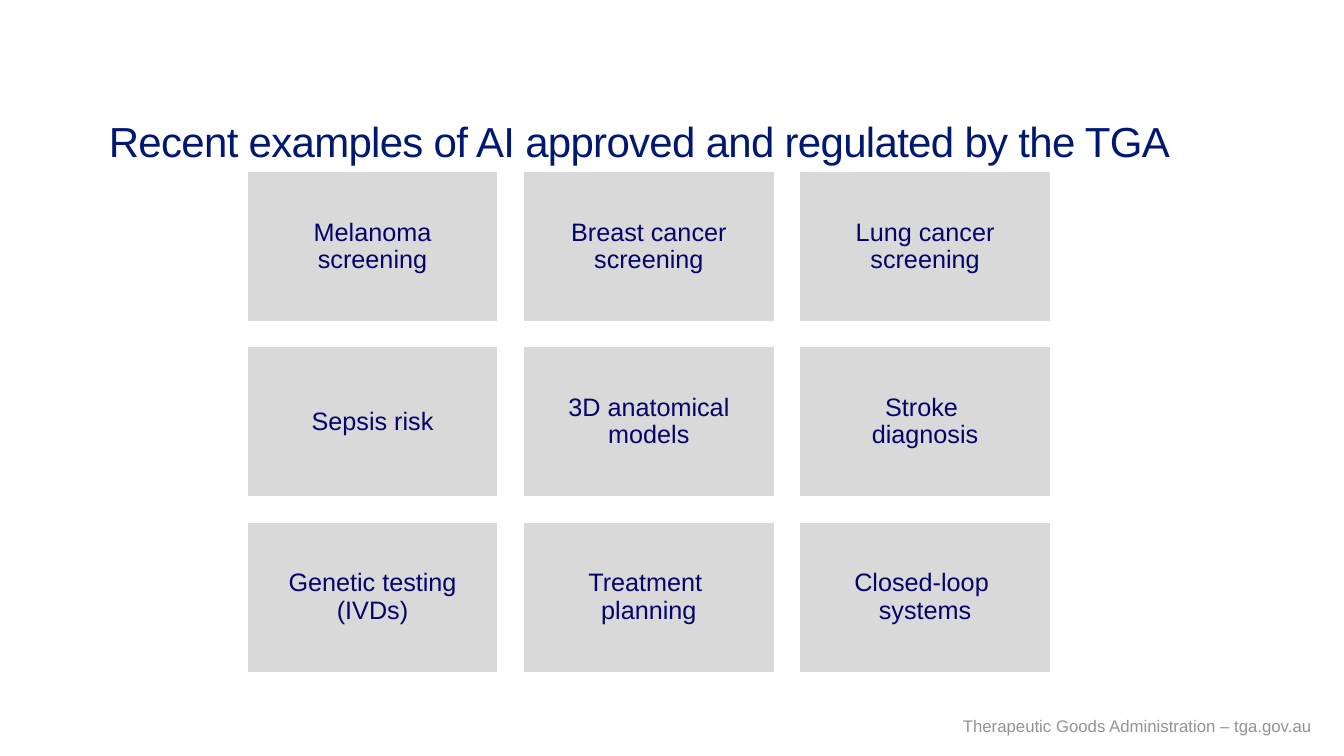
from pptx import Presentation
from pptx.dml.color import RGBColor
from pptx.enum.shapes import MSO_SHAPE as Shape
from pptx.enum.text import MSO_ANCHOR as Anchor, MSO_AUTO_SIZE as AutoSize, PP_ALIGN as Align
from pptx.util import Inches, Pt

NAVY = RGBColor(0x00, 0x18, 0x71)
INDIGO = RGBColor(0x05, 0x02, 0x6A)
GREY = RGBColor(0x90, 0x93, 0x95)
TILE_GREY = RGBColor(0xD9, 0xD9, 0xD9)
WHITE = RGBColor(0xFF, 0xFF, 0xFF)

COLUMNS = 3
TILE_WIDTH, TILE_HEIGHT = 2.49, 1.49
GAP = 0.25
# "\v" is a line break inside a paragraph
EXAMPLES = [
    "Melanoma\vscreening", "Breast cancer screening", "Lung cancer screening",
    "Sepsis risk", "3D anatomical models", "Stroke \vdiagnosis",
    "Genetic testing (IVDs)", "Treatment \vplanning", "Closed-loop \vsystems",
]


def write(shape, text, size, color, align, anchor, line_spacing=1.0):
    frame = shape.text_frame
    frame.text = text
    frame.word_wrap = True
    frame.auto_size = AutoSize.NONE
    frame.vertical_anchor = anchor
    para = frame.paragraphs[0]
    para.alignment = align
    para.line_spacing = line_spacing
    para.space_before = Pt(0)
    for span in para.runs:
        span.font.name = "Arial"
        span.font.size = Pt(size)
        span.font.color.rgb = color
    return para


def place_title(page, left, top, width, height):
    title = page.shapes.title
    title.left, title.top = Inches(left), Inches(top)
    title.width, title.height = Inches(width), Inches(height)
    para = write(title, "Recent examples of AI approved and regulated by the TGA",
                 30, NAVY, Align.LEFT, Anchor.BOTTOM, 0.9)
    para.runs[0].font._element.set("spc", "-50")


def add_tile(page, text, left, top):
    tile = page.shapes.add_shape(Shape.RECTANGLE, Inches(left), Inches(top),
                                 Inches(TILE_WIDTH), Inches(TILE_HEIGHT))
    tile.shadow.inherit = False
    tile.fill.solid()
    tile.fill.fore_color.rgb = TILE_GREY
    tile.line.color.rgb = WHITE
    tile.line.width = Pt(1)
    frame = tile.text_frame
    frame.margin_left = frame.margin_right = Inches(0.07)
    frame.margin_top = frame.margin_bottom = Inches(0.07)
    write(tile, text, 18, INDIGO, Align.CENTER, Anchor.MIDDLE, 0.9)


def add_example_grid(page, left, top):
    for index, example in enumerate(EXAMPLES):
        row, column = divmod(index, COLUMNS)
        add_tile(page, example,
                 left + column * (TILE_WIDTH + GAP),
                 top + row * (TILE_HEIGHT + GAP))


def add_footer(page, left, top, width, height):
    footer = page.shapes.add_textbox(Inches(left), Inches(top),
                                     Inches(width), Inches(height))
    write(footer, "Therapeutic Goods Administration – tga.gov.au",
          12, GREY, Align.RIGHT, Anchor.MIDDLE)


def main():
    deck = Presentation()
    deck.slide_width, deck.slide_height = Inches(13.33), Inches(7.5)
    page = deck.slides.add_slide(deck.slide_layouts.get_by_name("Title Only"))
    add_footer(page, 8.61, 7, 4.5, 0.4)
    place_title(page, 0.98, 0.72, 11.36, 0.98)
    add_example_grid(page, 2.45, 1.7)
    deck.save("out.pptx")


if __name__ == "__main__":
    main()
